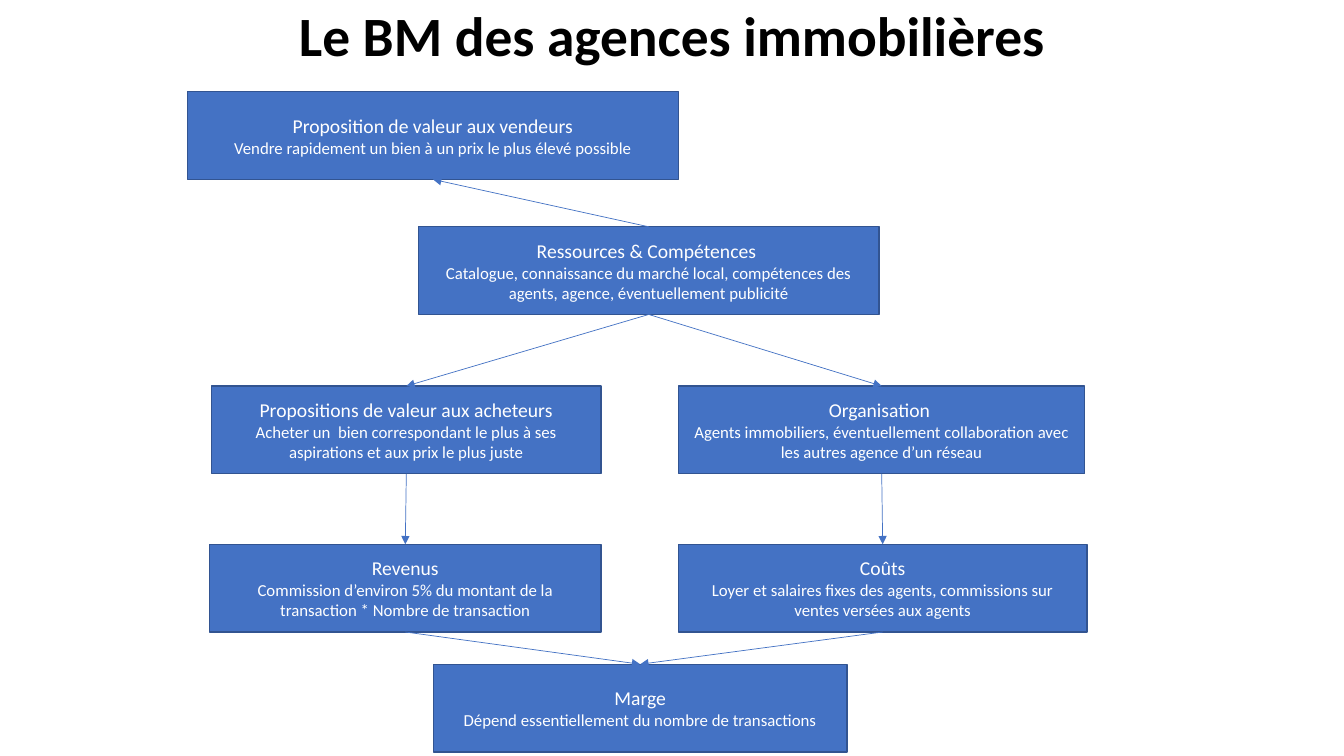
"""Build the slide on the business model of estate agencies."""
from lxml import etree
from pptx import Presentation
from pptx import util as u
from pptx.dml.color import RGBColor
from pptx.enum import shapes, text
from pptx.oxml.ns import qn

BLUE = RGBColor(0x44, 0x72, 0xC4)
DARK_BLUE = RGBColor(0x32, 0x54, 0x91)
WHITE = RGBColor(0xFF, 0xFF, 0xFF)
BLACK = RGBColor(0x00, 0x00, 0x00)
FONT = "Calibri"

BOX_HEIGHT = 0.87
ROW_TOPS = [0.91, 2.25, 3.83, 5.4, 6.59]
TOP_SITE, BOTTOM_SITE = 0, 2


def add_span(para, words, size, color, bold=False):
    para.alignment = text.PP_ALIGN.CENTER
    span = para.add_run()
    span.text = words
    span.font.name = FONT
    span.font.size = u.Pt(size)
    span.font.bold = bold
    span.font.color.rgb = color


deck = Presentation()
deck.slide_width = u.Inches(13.33)
deck.slide_height = u.Inches(7.5)
page = deck.slides.add_slide(deck.slide_layouts[6])

title_width = deck.slide_width * 3 // 4
title = page.shapes.add_textbox(
    (deck.slide_width - title_width) // 2, 0, title_width, u.Inches(0.76))
title.text_frame.word_wrap = True
title.text_frame.vertical_anchor = text.MSO_ANCHOR.MIDDLE
title_para = title.text_frame.paragraphs[0]
title_para.line_spacing = 0.9
add_span(title_para, "Le BM des agences immobilières", 39.6, BLACK, bold=True)

steps = [
    ("sellers", 0, 1.86, 4.87, "Proposition de valeur aux vendeurs",
     "Vendre rapidement un bien à un prix le plus élevé possible"),
    ("resources", 1, 4.15, 4.57, "Ressources & Compétences ",
     "Catalogue, connaissance du marché local, compétences des agents, "
     "agence, éventuellement publicité"),
    ("buyers", 2, 2.1, 3.86, "Propositions de valeur aux acheteurs",
     "Acheter un  bien correspondant le plus à ses aspirations et aux prix "
     "le plus juste"),
    ("organisation", 2, 6.73, 4.03, "Organisation ",
     "Agents immobiliers, éventuellement collaboration avec les autres "
     "agence d’un réseau"),
    ("revenue", 3, 2.08, 3.88, "Revenus",
     "Commission d’environ 5% du montant de la transaction * Nombre de "
     "transaction"),
    ("costs", 3, 6.73, 4.05, "Coûts",
     "Loyer et salaires fixes des agents, commissions sur ventes versées "
     "aux agents"),
    ("margin", 4, 4.3, 4.1, "Marge",
     "Dépend essentiellement du nombre de transactions"),
]

boxes = {}
for name, row, left, width, heading, detail in steps:
    box = page.shapes.add_shape(
        shapes.MSO_SHAPE.RECTANGLE, u.Inches(left), u.Inches(ROW_TOPS[row]),
        u.Inches(width), u.Inches(BOX_HEIGHT))
    box.shadow.inherit = False
    box.fill.solid()
    box.fill.fore_color.rgb = BLUE
    box.line.color.rgb = DARK_BLUE
    box.line.width = u.Pt(1)
    frame = box.text_frame
    frame.word_wrap = True
    frame.vertical_anchor = text.MSO_ANCHOR.MIDDLE
    add_span(frame.paragraphs[0], heading, 14, WHITE)
    add_span(frame.add_paragraph(), detail, 12, WHITE)
    boxes[name] = box

links = [
    ("resources", TOP_SITE, "sellers", BOTTOM_SITE),
    ("resources", BOTTOM_SITE, "buyers", TOP_SITE),
    ("resources", BOTTOM_SITE, "organisation", TOP_SITE),
    ("buyers", BOTTOM_SITE, "revenue", TOP_SITE),
    ("organisation", BOTTOM_SITE, "costs", TOP_SITE),
    ("revenue", BOTTOM_SITE, "margin", TOP_SITE),
    ("costs", BOTTOM_SITE, "margin", TOP_SITE),
]

for source, source_site, target, target_site in links:
    arrow = page.shapes.add_connector(shapes.MSO_CONNECTOR.STRAIGHT, 0, 0, 0, 0)
    arrow.begin_connect(boxes[source], source_site)
    arrow.end_connect(boxes[target], target_site)
    arrow.line.color.rgb = BLUE
    arrow.line.width = u.Pt(0.5)
    etree.SubElement(arrow.line._get_or_add_ln(), qn("a:tailEnd"), type="triangle")
    etree.SubElement(arrow._element.spPr, qn("a:effectLst"))

deck.save("out.pptx")
